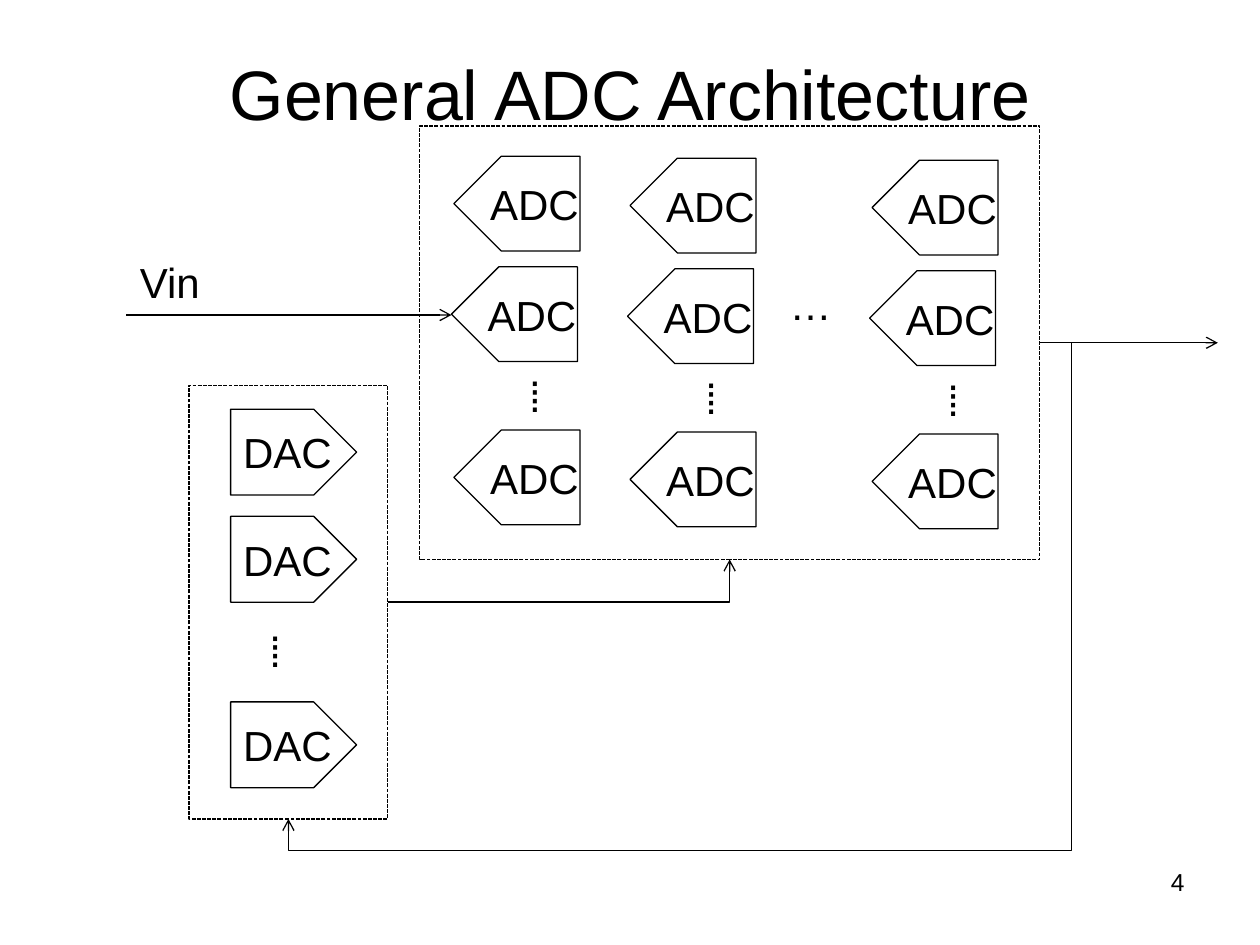
import dataclasses

import pptx
import pptx.dml.color
import pptx.enum.dml
import pptx.enum.shapes
import pptx.enum.text
import pptx.oxml
import pptx.oxml.ns
import pptx.util

Cm = pptx.util.Cm
Pt = pptx.util.Pt
qn = pptx.oxml.ns.qn
MSO = pptx.enum.shapes.MSO_SHAPE
ALIGN = pptx.enum.text.PP_ALIGN
ANCHOR = pptx.enum.text.MSO_ANCHOR
CONNECTOR = pptx.enum.shapes.MSO_CONNECTOR


@dataclasses.dataclass(frozen=True)
class Theme:
    ink: pptx.dml.color.RGBColor = pptx.dml.color.RGBColor(0, 0, 0)
    font: str = "Arial"
    title: int = 40
    body: int = 24
    number: int = 14
    line: float = 0.75


THEME = Theme()


def write(tf, text, size, align=ALIGN.LEFT):
    tf.text = text
    p = tf.paragraphs[0]
    p.alignment = align
    r = p.runs[0]
    r.font.name = THEME.font
    r.font.size = Pt(size)
    r.font.color.rgb = THEME.ink
    return p


def add_label(slide, text, x, y, w, h, size=THEME.body, align=ALIGN.LEFT, wrap=False):
    tf = slide.shapes.add_textbox(Cm(x), Cm(y), Cm(w), Cm(h)).text_frame
    tf.word_wrap = wrap
    write(tf, text, size, align)


def add_dots(slide, x, y):
    add_label(slide, "⁞", x, y, 0.76, 1.3)


def add_outline(slide, kind, x, y, w, h):
    s = slide.shapes.add_shape(kind, Cm(x), Cm(y), Cm(w), Cm(h))
    s.shadow.inherit = False
    s.fill.background()
    s.line.color.rgb = THEME.ink
    s.line.width = Pt(THEME.line)
    return s


def add_frame(slide, x, y, w, h):
    s = add_outline(slide, MSO.RECTANGLE, x, y, w, h)
    s.line.dash_style = pptx.enum.dml.MSO_LINE.SQUARE_DOT
    # sysDash has its own preset value
    s.line.dash_style = pptx.enum.dml.MSO_LINE.SQUARE_DOT
    s.line._ln.find(qn("a:prstDash")).set("val", "sysDash")


def add_converter(slide, text, x, y, h, points_left=False):
    s = add_outline(slide, MSO.PENTAGON, x, y, 2.54, h)
    s.adjustments[0] = 0.5
    if points_left:
        s.rotation = 180
        s._element.spPr.find(qn("a:xfrm")).set("flipV", "1")
    tf = s.text_frame
    tf.word_wrap = False
    tf.vertical_anchor = ANCHOR.MIDDLE
    p = write(tf, text, THEME.body)
    p.space_before = p.space_after = Pt(24)


def add_arrow(slide, x1, y1, x2, y2, preset="line", adjustments=()):
    s = slide.shapes.add_connector(CONNECTOR.STRAIGHT, Cm(x1), Cm(y1), Cm(x2), Cm(y2))
    s.line.color.rgb = THEME.ink
    s.line.width = Pt(THEME.line)
    tail = pptx.oxml.parse_xml(
        '<a:tailEnd xmlns:a="http://schemas.openxmlformats.org/drawingml/2006/main" type="arrow"/>'
    )
    s.line._ln.append(tail)
    spPr = s._element.spPr
    spPr.append(spPr.makeelement(qn("a:effectLst"), {}))
    geometry = spPr.find(qn("a:prstGeom"))
    geometry.set("prst", preset)
    guides = geometry.find(qn("a:avLst"))
    for i, value in enumerate(adjustments, 1):
        guide = {"name": f"adj{i}", "fmla": f"val {value}"}
        guides.append(guides.makeelement(qn("a:gd"), guide))


def add_adc_bank(slide, x, y, w, h):
    for i, column in enumerate((0.69, 4.24, 9.12)):
        left, top = x + column, y + 0.04 * i
        for dx, dy in ((0, 0.61), (-0.05, 2.84), (0, 6.13)):
            add_converter(slide, "ADC", left + dx, top + dy, 1.91, points_left=True)
        add_dots(slide, left + 1.27, top + 4.8)
    add_label(slide, "…", x + 7.21, y + 2.95, 1.37, 1.3)
    add_frame(slide, x, y, w, h)


def add_dac_bank(slide, x, y, w, h):
    for dy in (0.48, 2.64, 6.38):
        add_converter(slide, "DAC", x + 0.84, y + dy, 1.73)
    add_dots(slide, x + 1.37, y + 4.72)
    add_frame(slide, x, y, w, h)


def add_signals(slide, adc, dac):
    ax, ay, aw, ah = adc
    dx, dy, dw, dh = dac
    out_y = ay + ah / 2
    add_label(slide, "Vin", 2.57, 5.05, 1.73, 1.3)
    add_arrow(slide, 2.54, 6.35, ax + 0.64, 6.35)
    add_arrow(slide, dx + dw, dy + dh / 2, ax + aw / 2, ay + ah, "bentConnector2")
    add_arrow(slide, ax + aw, out_y, 24.55, out_y)
    add_arrow(slide, ax + aw, out_y, dx + dw / 2, dy + dh, "bentConnector4", (-4200, 106600))


def add_title(slide, text, x, y, w, h):
    s = slide.shapes.title
    s.left, s.top, s.width, s.height = Cm(x), Cm(y), Cm(w), Cm(h)
    s.text_frame.vertical_anchor = ANCHOR.MIDDLE
    write(s.text_frame, text, THEME.title, ALIGN.CENTER)


def main():
    prs = pptx.Presentation()
    prs.slide_width, prs.slide_height = Cm(25.4), Cm(19.05)
    slide = prs.slides.add_slide(prs.slide_layouts[5])
    adc = (8.46, 2.54, 12.5, 8.74)
    dac = (3.81, 7.77, 4.01, 8.74)
    add_title(slide, "General ADC Architecture", 1.27, 0.76, 22.86, 2.21)
    add_adc_bank(slide, *adc)
    add_dac_bank(slide, *dac)
    add_signals(slide, adc, dac)
    add_label(slide, "4", 18.2, 17.35, 5.93, 1.32, THEME.number, ALIGN.RIGHT, True)
    prs.save("out.pptx")


if __name__ == "__main__":
    main()
